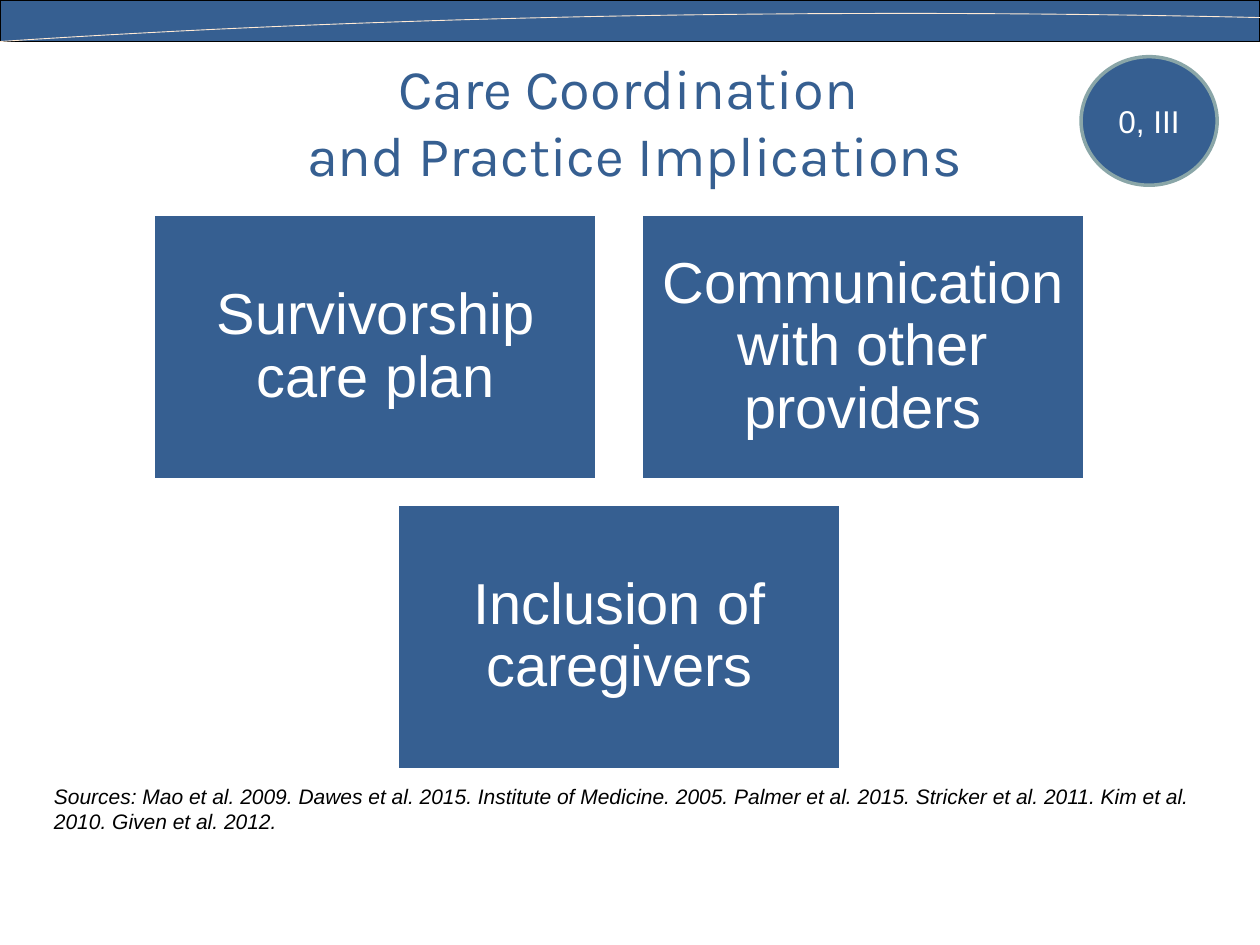
from lxml import etree
from pptx import Presentation
from pptx.dml.color import RGBColor
from pptx.enum import shapes, text
from pptx.util import Inches, Pt

# Content
TITLE = "Care Coordination \vand Practice Implications"
CARD_ROWS = [
    ["Survivorship care plan", "Communication with other providers"],
    ["Inclusion of caregivers"],
]
BADGE = "0, III"
SOURCES = (
    "Sources: Mao et al. 2009. Dawes et al. 2015. Institute of Medicine. 2005. "
    "Palmer et al. 2015. Stricker et al. 2011. Kim et al. 2010. Given et al. 2012."
)

# Colours
BLUE = RGBColor(0x36, 0x5F, 0x91)
WHITE = RGBColor(0xFF, 0xFF, 0xFF)
BLACK = RGBColor(0, 0, 0)
CREAM = RGBColor(0xFF, 0xEA, 0xD5)
SAGE = RGBColor(0x8A, 0xA6, 0xA8)

# Layout, in inches
PAGE_WIDTH, PAGE_HEIGHT = 10, 7.5
BAND_HEIGHT = 0.33
CURVE = [(10, 0.14), (7.44, 0.08), (3.79, 0.08), (0, 0.33)]
CURVE_STEPS = 40
CARD_WIDTH, CARD_HEIGHT = 3.52, 2.11
GAP_X, GAP_Y = 0.35, 0.19
CARDS_CENTER, CARDS_TOP = 4.915, 1.7


def write(box, content, size, color, font="Arial", italic=False, margin=None,
          align=text.PP_ALIGN.CENTER, anchor=text.MSO_ANCHOR.MIDDLE,
          line_spacing=None, space_after=None):
    frame = box.text_frame
    frame.word_wrap = True
    frame.vertical_anchor = anchor
    if margin is not None:
        frame.margin_left = frame.margin_right = Inches(margin)
        frame.margin_top = frame.margin_bottom = Inches(margin)
    frame.text = content
    para = frame.paragraphs[0]
    para.alignment = align
    para.line_spacing = line_spacing
    para.space_after = space_after
    for span in para.runs:
        span.font.name = font
        span.font.size = Pt(size)
        span.font.italic = italic
        span.font.color.rgb = color


def add_block(page, kind, place, line_color, line_width):
    block = page.shapes.add_shape(kind, *map(Inches, place))
    block.shadow.inherit = False
    block.fill.solid()
    block.fill.fore_color.rgb = BLUE
    block.line.color.rgb = line_color
    block.line.width = Pt(line_width)
    return block


def curve_point(t):
    weights = [(1 - t) ** 3, 3 * t * (1 - t) ** 2, 3 * t ** 2 * (1 - t), t ** 3]
    return tuple(Inches(sum(w * point[axis] for w, point in zip(weights, CURVE)))
                 for axis in (0, 1))


def main():
    deck = Presentation()
    deck.slide_width, deck.slide_height = Inches(PAGE_WIDTH), Inches(PAGE_HEIGHT)
    page = deck.slides.add_slide(deck.slide_layouts[5])
    rectangle = shapes.MSO_SHAPE.RECTANGLE

    # Top band with its curve
    add_block(page, rectangle, (0, 0, PAGE_WIDTH, BAND_HEIGHT), BLACK, 0.75)
    points = [curve_point(step / CURVE_STEPS) for step in range(CURVE_STEPS + 1)]
    builder = page.shapes.build_freeform(*points[0])
    builder.add_line_segments(points[1:], close=False)
    curve = builder.convert_to_shape()
    curve.shadow.inherit = False
    curve.fill.background()
    curve.line.color.rgb = CREAM
    curve.line.width = Pt(0.5)

    # Title
    title = page.shapes.title
    title.left, title.top = Inches(0.25), Inches(0.33)
    title.width, title.height = Inches(9.58), Inches(1.25)
    write(title, TITLE, 32, BLUE, font="Karla")

    # Cards, each row centred
    for row, labels in enumerate(CARD_ROWS):
        row_width = len(labels) * (CARD_WIDTH + GAP_X) - GAP_X
        top = CARDS_TOP + row * (CARD_HEIGHT + GAP_Y)
        for column, label in enumerate(labels):
            left = CARDS_CENTER - row_width / 2 + column * (CARD_WIDTH + GAP_X)
            card = add_block(page, rectangle,
                             (left, top, CARD_WIDTH, CARD_HEIGHT), WHITE, 2)
            write(card, label, 33, WHITE, margin=0.14, line_spacing=0.9)

    # Badge
    badge = add_block(page, shapes.MSO_SHAPE.OVAL, (8.58, 0.45, 1.08, 1.02), SAGE, 2)
    write(badge, BADGE, 18, WHITE)

    # Sources
    sources = page.shapes.add_textbox(*map(Inches, (0.33, 6.17, 9.5, 0.5)))
    write(sources, SOURCES, 12, BLACK, italic=True, align=text.PP_ALIGN.LEFT,
          anchor=text.MSO_ANCHOR.TOP, space_after=Pt(6))

    deck.save("out.pptx")


if __name__ == "__main__":
    main()
